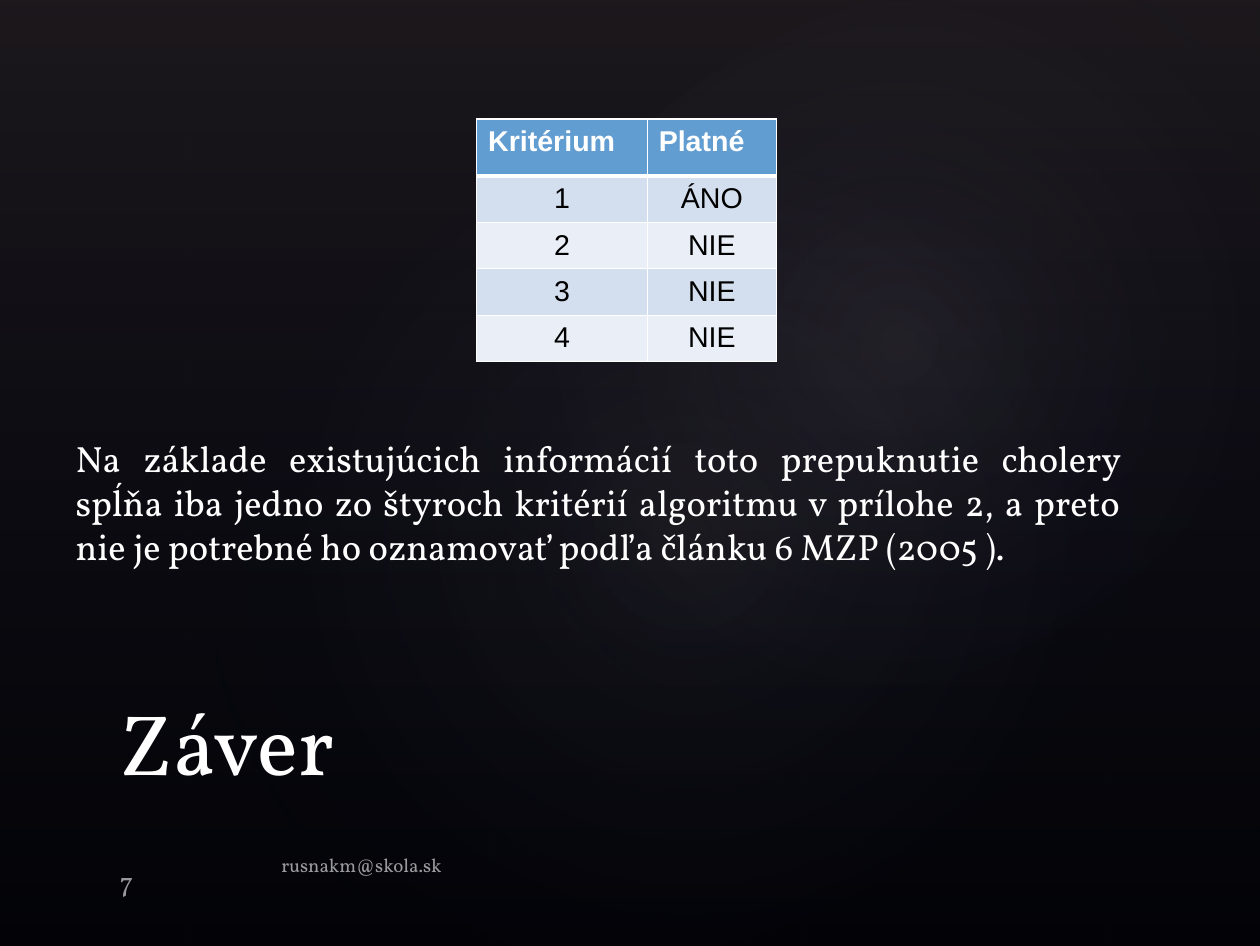
"""Build the conclusion slide with the cholera criteria table."""
from lxml import etree
from pptx import Presentation
from pptx.dml.color import RGBColor
from pptx.enum.shapes import MSO_SHAPE
from pptx.enum.text import MSO_ANCHOR, PP_ALIGN
from pptx.oxml import parse_xml
from pptx.oxml.ns import nsdecls, qn
from pptx.util import Cm, Pt

TITLE = "Záver"
CONCLUSION = (
    "Na základe existujúcich informácií toto prepuknutie cholery spĺňa iba jedno "
    "zo štyroch kritérií algoritmu v prílohe 2, a preto nie je potrebné ho "
    "oznamovať podľa článku 6 MZP (2005 )."
)
CRITERIA = [
    ("Kritérium", "Platné"),
    ("1", "ÁNO"),
    ("2", "NIE"),
    ("3", "NIE"),
    ("4", "NIE"),
]
EMAIL = "rusnakm@skola.sk"
PAGE_NUMBER = "7"

WHITE = RGBColor(0xFF, 0xFF, 0xFF)
BLACK = RGBColor(0, 0, 0)
HEADER_BLUE = RGBColor(0x62, 0x9D, 0xD1)
BAND_DARK = RGBColor(0xD3, 0xDF, 0xEE)
BAND_LIGHT = RGBColor(0xEA, 0xEF, 0xF7)
PLUM = RGBColor(0x50, 0x46, 0x52)
NAVY = RGBColor(0x24, 0x28, 0x52)
MIST = RGBColor(0xC4, 0xBC, 0xC6)

LEFT, CENTER, JUSTIFY = PP_ALIGN.LEFT, PP_ALIGN.CENTER, PP_ALIGN.JUSTIFY
TOP, MIDDLE, BOTTOM = MSO_ANCHOR.TOP, MSO_ANCHOR.MIDDLE, MSO_ANCHOR.BOTTOM
RECTANGLE, OVAL = MSO_SHAPE.RECTANGLE, MSO_SHAPE.OVAL

SERIF, SANS = "Vollkorn", "Arial"
WIDTH, HEIGHT = 27.99, 21.01
LINEAR = '<a:lin ang="5400000" scaled="0"/>'
RADIAL = '<a:path path="circle"><a:fillToRect l="50000" t="50000" r="50000" b="50000"/></a:path>'

GLOWS = [
    (RECTANGLE, (0, 0, WIDTH, HEIGHT), 0, [(0, PLUM, 36), (100, NAVY, 10)], LINEAR),
    (OVAL, (4.19, 3.18, 22.17, 17.48), 328.7, [(0, MIST, 7), (58, NAVY, 0)], RADIAL),
    (OVAL, (10.03, 0.36, 19.84, 14.55), 328.7, [(0, MIST, 8), (58, NAVY, 0)], RADIAL),
]
TABLE_LEFT, TABLE_TOP = 10.59, 2.64
COLUMN_WIDTHS = [3.79, 2.87]
HEADER_HEIGHT, ROW_HEIGHT = 1.27, 1.03
CELL_TOP_MARGIN = 0.23


def write_text(frame, text, *, size, font=SERIF, color=WHITE, opacity=100,
               bold=False, align=LEFT, anchor=TOP, line_spacing=None):
    """Put one formatted paragraph into a text frame."""
    frame.word_wrap = True
    frame.vertical_anchor = anchor
    paragraph = frame.paragraphs[0]
    paragraph.alignment = align
    paragraph.line_spacing = line_spacing
    run = paragraph.add_run()
    run.text = text
    run.font.name, run.font.size, run.font.bold = font, Pt(size), bold
    run.font.color.rgb = color
    if opacity < 100:
        shade = run.font.fill._xPr.find(".//" + qn("a:srgbClr"))
        etree.SubElement(shade, qn("a:alpha"), val=str(opacity * 1000))


def place(shape, box):
    """Set left, top, width and height in centimetres."""
    shape.left, shape.top, shape.width, shape.height = map(Cm, box)


def set_insets(frame, bottom=0.14):
    """Apply the common text margins."""
    frame.margin_left = frame.margin_right = Cm(0.28)
    frame.margin_top, frame.margin_bottom = Cm(0.14), Cm(bottom)


def add_text(slide, text, box, bottom_inset=0.14, **text_format):
    """Add a text box."""
    frame = slide.shapes.add_textbox(*map(Cm, box)).text_frame
    set_insets(frame, bottom_inset)
    write_text(frame, text, **text_format)


def add_glow(slide, kind, box, rotation, stops, direction):
    """Add a translucent gradient shape."""
    shape = slide.shapes.add_shape(kind, *map(Cm, box))
    shape.rotation = rotation
    shape.shadow.inherit = False
    shape.line.fill.background()
    stop_xml = "".join(
        f'<a:gs pos="{position * 1000}"><a:srgbClr val="{color}">'
        f'<a:alpha val="{opacity * 1000}"/></a:srgbClr></a:gs>'
        for position, color, opacity in stops
    )
    properties = shape._element.spPr
    properties.find(qn("a:prstGeom")).addnext(parse_xml(
        f'<a:gradFill {nsdecls("a")} rotWithShape="1"><a:gsLst>{stop_xml}</a:gsLst>'
        f"{direction}</a:gradFill>"
    ))


def set_borders(cell, top, bottom):
    """Draw white cell borders with the given top and bottom widths."""
    widths = {"lnL": 1, "lnR": 1, "lnT": top, "lnB": bottom}
    properties = cell._tc.get_or_add_tcPr()
    for index, (side, width) in enumerate(widths.items()):
        properties.insert(index, parse_xml(
            f'<a:{side} {nsdecls("a")} w="{Pt(width)}"><a:solidFill>'
            f'<a:srgbClr val="{WHITE}"/></a:solidFill></a:{side}>'
        ))


def add_criteria_table(slide):
    """Add the table of criteria."""
    heights = [HEADER_HEIGHT] + [ROW_HEIGHT] * (len(CRITERIA) - 1)
    box = (TABLE_LEFT, TABLE_TOP, sum(COLUMN_WIDTHS), sum(heights))
    table = slide.shapes.add_table(
        len(CRITERIA), len(COLUMN_WIDTHS), *map(Cm, box)).table
    for column, width in zip(table.columns, COLUMN_WIDTHS):
        column.width = Cm(width)
    for index, (row, height, values) in enumerate(zip(table.rows, heights, CRITERIA)):
        row.height = Cm(height)
        header = index == 0
        band = BAND_DARK if index % 2 else BAND_LIGHT
        for cell, value in zip(row.cells, values):
            cell.margin_top = Cm(CELL_TOP_MARGIN)
            cell.fill.solid()
            cell.fill.fore_color.rgb = HEADER_BLUE if header else band
            set_borders(cell, top=3 if index == 1 else 1, bottom=3 if header else 1)
            write_text(cell.text_frame, value, size=18, font=SANS, bold=header,
                       color=WHITE if header else BLACK,
                       align=LEFT if header else CENTER, line_spacing=0.87)


def main():
    """Build and save the presentation."""
    presentation = Presentation()
    presentation.slide_width, presentation.slide_height = Cm(WIDTH), Cm(HEIGHT)
    slide = presentation.slides.add_slide(presentation.slide_layouts[5])
    slide.background.fill.solid()
    slide.background.fill.fore_color.rgb = BLACK

    for glow in GLOWS:
        add_glow(slide, *glow)

    add_text(slide, CONCLUSION, (1.4, 8.6, 23.8, 5.1),
             size=23, align=JUSTIFY, anchor=MIDDLE)

    title = slide.shapes.title
    slide.shapes._spTree.append(title._element)
    place(title, (2.37, 14.96, 23.09, 2.79))
    set_insets(title.text_frame)
    write_text(title.text_frame, TITLE, size=54, anchor=BOTTOM)

    add_criteria_table(slide)
    add_text(slide, EMAIL, (5.97, 18.81, 15.21, 1.12), size=12, opacity=60)
    add_text(slide, PAGE_NUMBER, (2.38, 18.86, 2.29, 1.12), bottom_inset=0.03,
             size=18, opacity=60, anchor=BOTTOM)
    presentation.save("out.pptx")


if __name__ == "__main__":
    main()
